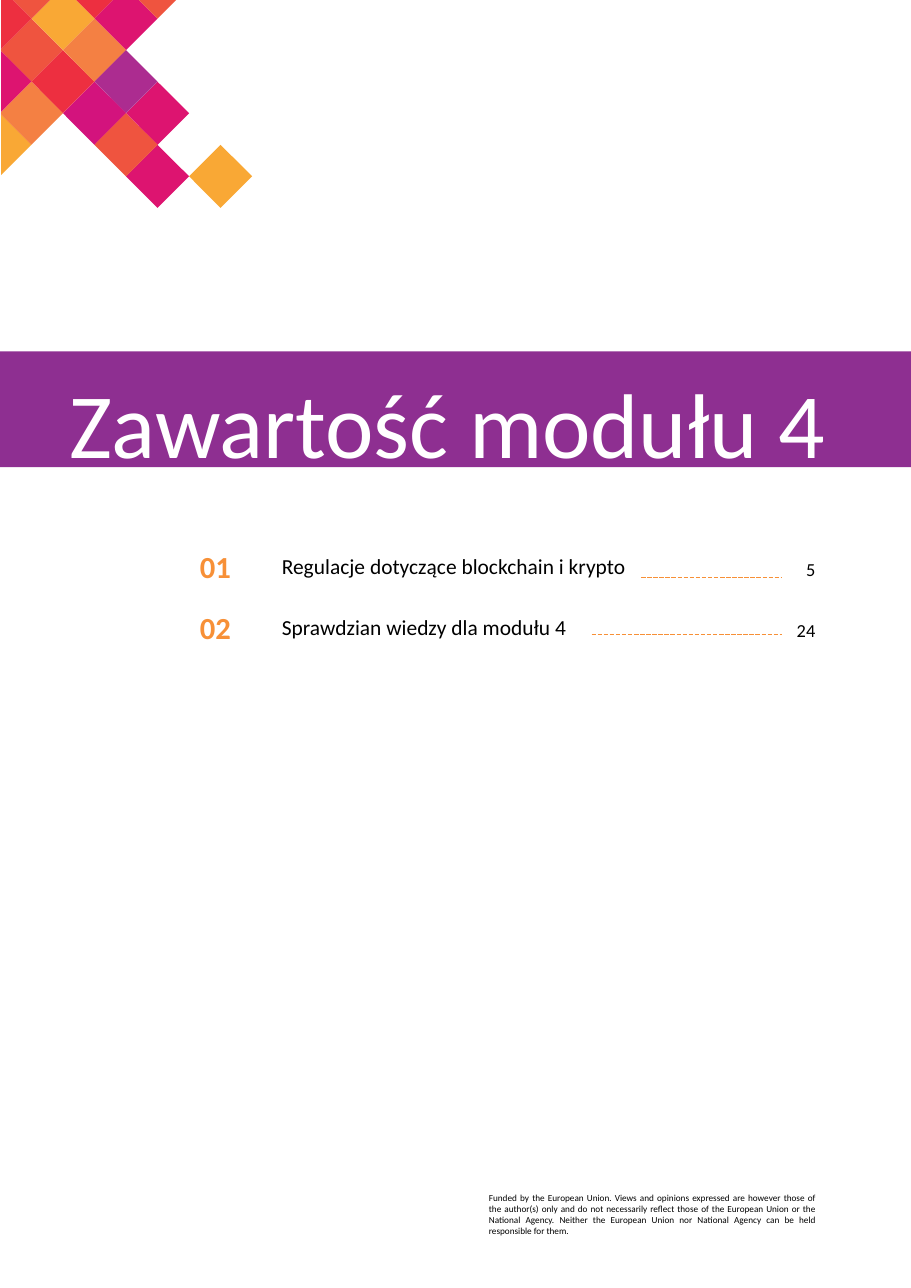
"""Builds the contents page of module 4."""
from dataclasses import dataclass

from lxml import etree
from pptx import Presentation
from pptx.dml.color import RGBColor
from pptx.enum.dml import MSO_LINE
from pptx.enum.shapes import MSO_CONNECTOR, MSO_SHAPE
from pptx.enum.text import MSO_ANCHOR, PP_ALIGN
from pptx.oxml.ns import qn
from pptx.util import Inches, Pt

RECTANGLE = MSO_SHAPE.RECTANGLE
STRAIGHT = MSO_CONNECTOR.STRAIGHT
DASHED = MSO_LINE.SQUARE_DOT
TOP, MIDDLE = MSO_ANCHOR.TOP, MSO_ANCHOR.MIDDLE
LEFT, CENTER, RIGHT = PP_ALIGN.LEFT, PP_ALIGN.CENTER, PP_ALIGN.RIGHT
JUSTIFY = PP_ALIGN.JUSTIFY


@dataclass(frozen=True)
class Theme:
    font: str = "Calibri"
    band: str = "8E2F91"
    accent: str = "F79037"
    ink: str = "000000"
    paper: str = "FFFFFF"
    red: str = "ED2F40"
    pink: str = "DD1470"
    magenta: str = "D3137D"
    violet: str = "AC2C90"
    coral: str = "EF543F"
    orange: str = "F48043"
    amber: str = "F9A835"
    title_size: int = 60
    number_size: int = 20
    entry_size: int = 14
    page_size: int = 12
    notice_size: int = 6


THEME = Theme()
PAGE_WIDTH, PAGE_HEIGHT = 8.27, 11.69
HALF_TILE = 0.286
MOSAIC_TOP = 0.17
MOSAIC_LIMITS = (0.01, -0.04)
TILES = [
    (3, -1, THEME.red), (4, 0, THEME.pink), (5, -1, THEME.coral),
    (2, 0, THEME.amber), (1, 1, THEME.coral), (2, 2, THEME.red),
    (3, 1, THEME.orange), (0, 2, THEME.pink), (0, 4, THEME.amber),
    (1, 3, THEME.orange), (7, 5, THEME.amber), (5, 5, THEME.pink),
    (5, 3, THEME.pink), (4, 2, THEME.violet), (3, 3, THEME.magenta),
    (4, 4, THEME.coral), (1, -1, THEME.coral), (0, 0, THEME.red),
]

ENTRIES_TOP, ENTRY_PITCH, ENTRY_HEIGHT = 4.95, 0.55, 0.38
LEADER_END = 7.1
ENTRIES = [
    ("Regulacje dotyczące blockchain i krypto", "5", 4.35, 5.82, 0.29),
    ("Sprawdzian wiedzy dla modułu 4", "24", 3.88, 5.37, 0.26),
]
NOTICE = (
    "Funded by the European Union. Views and opinions expressed are however "
    "those of the author(s) only and do not necessarily reflect those of the "
    "European Union or the National Agency. Neither the European Union nor "
    "National Agency can be held responsible for them."
)


def paint(shape, color):
    """Give a shape a flat fill without outline or shadow."""
    shape.shadow.inherit = False
    shape.fill.solid()
    shape.fill.fore_color.rgb = RGBColor.from_string(color)
    shape.line.fill.background()


def clip(points, axis, limit):
    """Cut away the part of a polygon below a limit on one axis."""
    kept = []
    for start, end in zip(points, points[1:] + points[:1]):
        before, after = start[axis] - limit, end[axis] - limit
        if before >= 0:
            kept.append(start)
        if before * after < 0:
            share = before / (before - after)
            kept.append(tuple(s + share * (e - s) for s, e in zip(start, end)))
    return kept


def add_tile(mosaic, column, row, color):
    """Draw one diamond of the mosaic, cut at the page edges."""
    x, y = column * HALF_TILE, MOSAIC_TOP + row * HALF_TILE
    corners = [(x, y - HALF_TILE), (x + HALF_TILE, y),
               (x, y + HALF_TILE), (x - HALF_TILE, y)]
    for axis, limit in enumerate(MOSAIC_LIMITS):
        corners = clip(corners, axis, limit)
    first, *others = [(Inches(px), Inches(py)) for px, py in corners]
    outline = mosaic.build_freeform(*first, scale=1.0)
    outline.add_line_segments(others, close=True)
    paint(outline.convert_to_shape(), color)


def add_text(slide, text, box, size, color=THEME.ink, align=LEFT,
             anchor=MIDDLE, bold=False):
    """Place one wrapped paragraph and return its text frame."""
    frame = slide.shapes.add_textbox(*map(Inches, box)).text_frame
    frame.word_wrap = True
    frame.vertical_anchor = anchor
    frame.text = text
    paragraph = frame.paragraphs[0]
    paragraph.alignment = align
    font = paragraph.runs[0].font
    font.name, font.size, font.bold = THEME.font, Pt(size), bold
    font.color.rgb = RGBColor.from_string(color)
    return frame


def add_leader(slide, start, y):
    """Draw the dashed line that leads to a page number."""
    leader = slide.shapes.add_connector(
        STRAIGHT, Inches(start), Inches(y), Inches(LEADER_END), Inches(y))
    leader.line.color.rgb = RGBColor.from_string(THEME.accent)
    leader.line.width = Pt(1)
    leader.line.dash_style = DASHED
    etree.SubElement(leader._element.spPr, qn("a:effectLst"))


def add_entry(slide, index, label, page, label_width, leader_start, leader_drop):
    """Add one line of the contents list."""
    top = ENTRIES_TOP + index * ENTRY_PITCH
    add_text(slide, f"{index + 1:02}", (1.6, top, 0.71, ENTRY_HEIGHT),
             THEME.number_size, THEME.accent, CENTER, bold=True)
    add_text(slide, label, (2.46, top, label_width, ENTRY_HEIGHT),
             THEME.entry_size)
    add_text(slide, page, (7, top + 0.03, 0.5, ENTRY_HEIGHT),
             THEME.page_size, align=RIGHT)
    add_leader(slide, leader_start, top + leader_drop)


def main():
    """Build and save the contents page."""
    deck = Presentation()
    deck.slide_width, deck.slide_height = Inches(PAGE_WIDTH), Inches(PAGE_HEIGHT)
    slide = deck.slides.add_slide(deck.slide_layouts[6])

    band = slide.shapes.add_shape(
        RECTANGLE, 0, Inches(3.19), Inches(PAGE_WIDTH), Inches(1.05))
    paint(band, THEME.band)
    mosaic = slide.shapes.add_group_shape().shapes
    for column, row, color in TILES:
        add_tile(mosaic, column, row, color)

    add_text(slide, NOTICE, (4.34, 10.77, 3.16, 0.5), THEME.notice_size,
             align=JUSTIFY, anchor=TOP)
    for index, entry in enumerate(ENTRIES):
        add_entry(slide, index, *entry)
    title = add_text(slide, "Zawartość modułu 4", (0.53, 3.24, 7.3, 1.06),
                     THEME.title_size, THEME.paper, anchor=TOP)
    title.margin_top = Inches(0.09)
    deck.save("out.pptx")


if __name__ == "__main__":
    main()
